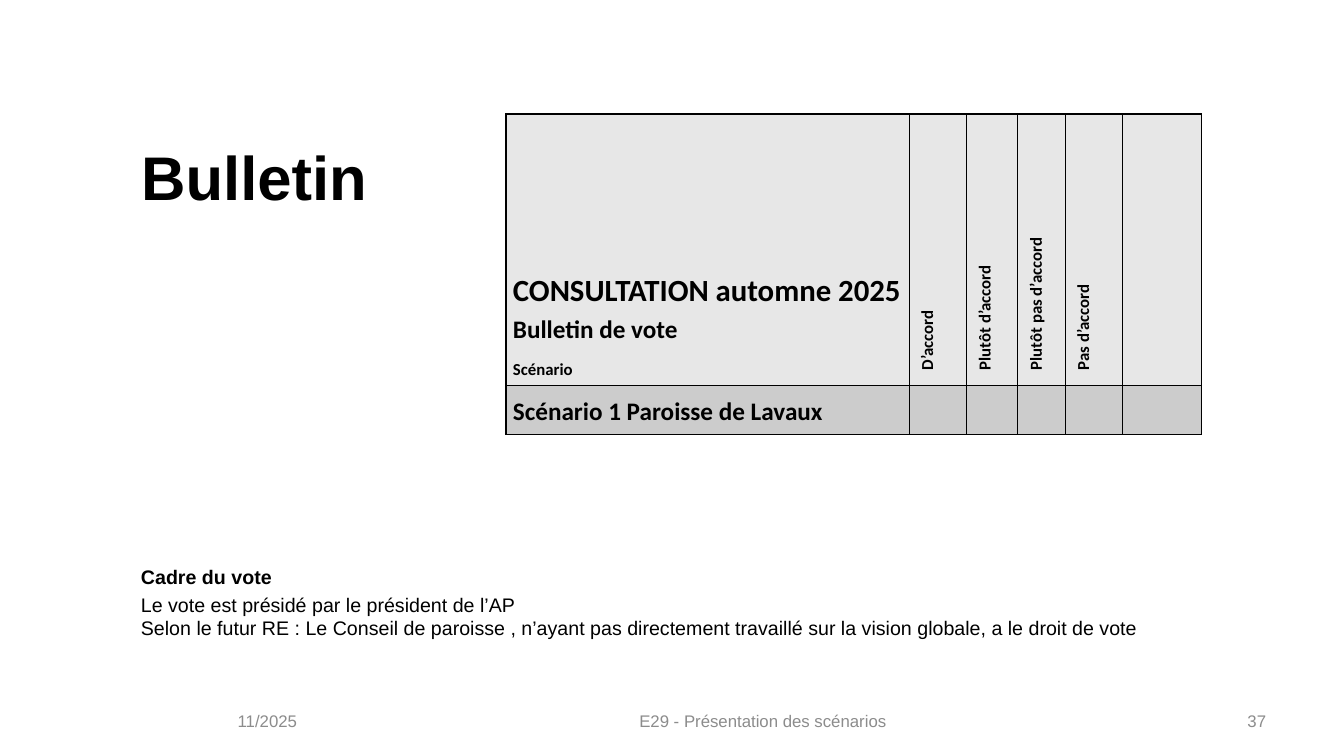
from dataclasses import dataclass

from lxml import etree
from pptx import Presentation
from pptx import util as u
from pptx.dml.color import RGBColor
from pptx.enum import text
from pptx.oxml import ns


@dataclass(frozen=True)
class Theme:
    """Colours, fonts and type sizes of the slide."""
    ink: str = "000000"
    muted: str = "8C8C8C"
    head: str = "E7E7E7"
    row: str = "CCCCCC"
    sans: str = "Arial"
    form: str = "Calibri"
    title: int = 44
    large: int = 22
    mid: int = 18
    body: int = 14
    small: int = 12
    rule: float = 0.96


THEME = Theme()
ALIGN = text.PP_ALIGN
ANCHOR = text.MSO_ANCHOR


def style(font, size, face=THEME.sans, color=THEME.ink, bold=False):
    """Set the look of a paragraph or run font."""
    font.size, font.name, font.bold = u.Pt(size), face, bold
    font.color.rgb = RGBColor.from_string(color)


def add_box(slide, box, anchor=ANCHOR.TOP):
    """Add a wrapping text box and return its frame."""
    frame = slide.shapes.add_textbox(*map(u.Pt, box)).text_frame
    frame.word_wrap = True
    frame.vertical_anchor = anchor
    return frame


def add_title(slide, box):
    """Place and format the title."""
    title = slide.shapes.title
    title.left, title.top, title.width, title.height = map(u.Pt, box)
    frame = title.text_frame
    frame.text = "Bulletin"
    frame.auto_size = text.MSO_AUTO_SIZE.NONE
    frame.vertical_anchor = ANCHOR.MIDDLE
    para = frame.paragraphs[0]
    para.alignment = ALIGN.LEFT
    style(para.font, THEME.title, bold=True)


def add_note(slide, box):
    """Add the rules of the vote."""
    frame = add_box(slide, box)
    lead, rest = frame.paragraphs[0], frame.add_paragraph()
    lead.text = "Cadre du vote"
    rest.text = (
        "Le vote est présidé par le président de l’AP\n"
        "Selon le futur RE : Le Conseil de paroisse , n’ayant pas directement "
        "travaillé sur la vision globale, a le droit de vote"
    )
    rest.space_before = u.Pt(2.8)
    style(lead.font, THEME.body, bold=True)
    style(rest.font, THEME.body)


def format_cell(cell, color):
    """Give a cell its margins, borders and fill."""
    cell.margin_left = cell.margin_right = u.Pt(5)
    cell.margin_top = cell.margin_bottom = u.Pt(3.6)
    props = cell._tc.get_or_add_tcPr()
    for side in ("lnL", "lnR", "lnT", "lnB"):
        line = etree.SubElement(props, ns.qn(f"a:{side}"), w=str(u.Pt(THEME.rule)))
        fill = etree.SubElement(line, ns.qn("a:solidFill"))
        etree.SubElement(fill, ns.qn("a:srgbClr"), val=THEME.ink)
    cell.fill.solid()
    cell.fill.fore_color.rgb = RGBColor.from_string(color)


def set_label(para, words, size):
    """Write a bold form label into a paragraph."""
    para.text = words
    para.line_spacing = 1.15
    para.space_after = u.Pt(8)
    style(para.font, size, THEME.form, bold=True)


def fill_head(cell):
    """Write the heading of the ballot."""
    cell.vertical_anchor = ANCHOR.BOTTOM
    frame = cell.text_frame
    lead = frame.paragraphs[0]
    set_label(lead, "CONSULTATION automne 2025\nBulletin de vote", THEME.large)
    for run, size in zip(lead.runs, (THEME.large, THEME.mid)):
        style(run.font, size, THEME.form, bold=True)
    set_label(frame.add_paragraph(), "Scénario", THEME.small)


def add_ballot(slide, box):
    """Add the ballot table."""
    widths = (288, 41, 36.7, 33.8, 41, 56.2)
    heights = (193.7, 35.3)
    table = slide.shapes.add_table(
        len(heights), len(widths), *map(u.Pt, box)).table
    table.first_row = table.horz_banding = False
    for col, width in zip(table.columns, widths):
        col.width = u.Pt(width)
    for row, height, color in zip(table.rows, heights, (THEME.head, THEME.row)):
        row.height = u.Pt(height)
        for cell in row.cells:
            format_cell(cell, color)
    fill_head(table.cell(0, 0))
    votes = ("D’accord", "Plutôt d’accord", "Plutôt pas d’accord", "Pas d’accord")
    for col, vote in enumerate(votes, 1):
        cell = table.cell(0, col)
        cell._tc.get_or_add_tcPr().set("vert", "vert270")
        para = cell.text_frame.paragraphs[0]
        para._p.get_or_add_pPr().set("marL", str(u.Pt(5.65)))
        set_label(para, vote, THEME.small)
    choice = table.cell(1, 0)
    choice.vertical_anchor = ANCHOR.MIDDLE
    set_label(choice.text_frame.paragraphs[0],
              "Scénario 1 Paroisse de Lavaux", THEME.mid)


def add_foot(slide, box):
    """Add the date, footer and page number along a strip."""
    left, top, width, height = box
    parts = (
        ("11/2025", 0, 86.4, ALIGN.LEFT),
        ("E29 - Présentation des scénarios", 102.2, 560.2, ALIGN.CENTER),
        ("37", width - 60.5, 60.5, ALIGN.RIGHT),
    )
    for words, shift, wide, align in parts:
        frame = add_box(slide, (left + shift, top, wide, height), ANCHOR.MIDDLE)
        para = frame.paragraphs[0]
        para.text = words
        para.alignment = align
        style(para.font, THEME.small, color=THEME.muted)


def main():
    """Build and save the slide."""
    deck = Presentation()
    deck.slide_width, deck.slide_height = u.Pt(960), u.Pt(540)
    slide = deck.slides.add_slide(deck.slide_layouts[5])
    add_title(slide, (93.6, 80.6, 748.8, 90))
    add_note(slide, (93.6, 400.3, 787.7, 59))
    add_ballot(slide, (361.4, 81.4, 496.7, 229))
    add_foot(slide, (162.7, 500.4, 748.8, 28.8))
    deck.save("out.pptx")


if __name__ == "__main__":
    main()
